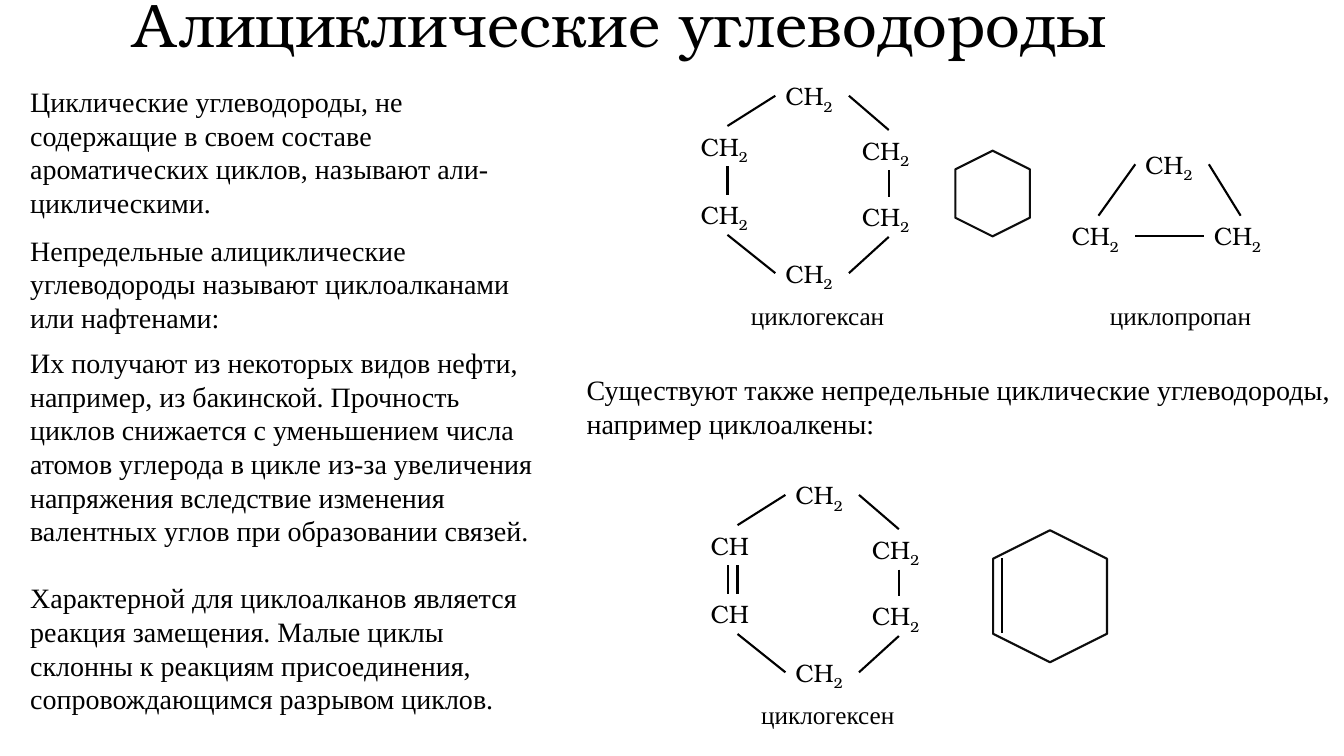
from dataclasses import dataclass

from lxml.etree import SubElement
from pptx import Presentation
from pptx.dml.color import RGBColor
from pptx.enum.shapes import MSO_CONNECTOR, MSO_SHAPE
from pptx.enum.text import MSO_ANCHOR, MSO_AUTO_SIZE
from pptx.oxml.ns import qn
from pptx.util import Inches, Pt

TOP, LEFT, BOTTOM, RIGHT = range(4)


@dataclass(frozen=True)
class Theme:
    ink: RGBColor = RGBColor(0, 0, 0)
    outline: RGBColor = RGBColor(0x0D, 0x0D, 0x0D)
    serif: str = "Times New Roman"
    formula: str = "TeX Gyre Bonum"
    title_size: int = 44
    body_size: int = 20
    label_size: int = 18
    line_width: float = 1.5


class ChemistrySlide:
    def __init__(self, slide, theme):
        self.shapes = slide.shapes
        self.theme = theme

    def text_box(self, left, top, width, height, paragraphs, size, font=None,
                 grow=True, anchor=MSO_ANCHOR.TOP, paragraph_format=None):
        """Each paragraph is a list of runs; a run of digits is a subscript."""
        box = self.shapes.add_textbox(*map(Inches, (left, top, width, height)))
        frame = box.text_frame
        frame_format = {
            "word_wrap": True,
            "vertical_anchor": anchor,
            "auto_size": MSO_AUTO_SIZE.SHAPE_TO_FIT_TEXT if grow else MSO_AUTO_SIZE.NONE,
        }
        for name, value in frame_format.items():
            setattr(frame, name, value)
        for index, runs in enumerate(paragraphs):
            paragraph = frame.add_paragraph() if index else frame.paragraphs[0]
            if index or len(paragraphs) == 1:
                for name, value in (paragraph_format or {}).items():
                    setattr(paragraph, name, value)
            for text in runs:
                run = paragraph.add_run()
                run.text = text
                run.font.color.rgb = self.theme.ink
                for name, value in {"size": Pt(size), "name": font or self.theme.serif}.items():
                    setattr(run.font, name, value)
                if text.isdigit():
                    run.font._element.set("baseline", "-25000")
        return box

    def label(self, left, top, width, text):
        self.text_box(left, top, width, 0.4, [[text]], self.theme.label_size)

    def atom(self, left, top, runs=("CH", "2")):
        return self.text_box(left, top, 0.73, 0.4, [runs],
                             self.theme.label_size, self.theme.formula)

    def line(self, start=(0, 0), end=(0, 0)):
        connector = self.shapes.add_connector(
            MSO_CONNECTOR.STRAIGHT, *map(Inches, (*start, *end)))
        connector.line.color.rgb = self.theme.ink
        connector.line.width = Pt(self.theme.line_width)
        SubElement(connector._element.spPr, qn("a:effectLst"))
        return connector

    def bonds(self, atoms, links):
        """Join atoms by (first, its side, second, its side)."""
        for first, first_side, second, second_side in links:
            bond = self.line()
            bond.begin_connect(atoms[first], first_side)
            bond.end_connect(atoms[second], second_side)

    def hexagon(self, left, top, width, height):
        shape = self.shapes.add_shape(
            MSO_SHAPE.HEXAGON, *map(Inches, (left, top, width, height)))
        shape.rotation = 270
        shape.shadow.inherit = False
        shape.fill.background()
        shape.line.color.rgb = self.theme.outline
        shape.line.width = Pt(self.theme.line_width)

    def six_ring(self, left, top, name, left_runs=("CH", "2")):
        atoms = {
            "top": self.atom(left + 0.84, top),
            "upper left": self.atom(left, top + 0.5, left_runs),
            "lower left": self.atom(left, top + 1.18, left_runs),
            "bottom": self.atom(left + 0.84, top + 1.76),
            "lower right": self.atom(left + 1.6, top + 1.2),
            "upper right": self.atom(left + 1.6, top + 0.54),
        }
        self.bonds(atoms, [
            ("upper left", BOTTOM, "lower left", TOP),
            ("upper right", BOTTOM, "lower right", TOP),
            ("lower left", BOTTOM, "bottom", LEFT),
            ("bottom", RIGHT, "lower right", BOTTOM),
            ("upper right", TOP, "top", RIGHT),
            ("upper left", TOP, "top", LEFT),
        ])
        self.label(left + 0.5, top + 2.18, 1.68, name)

    def three_ring(self, left, top, name):
        atoms = {
            "top": self.atom(left + 0.73, top),
            "left": self.atom(left, top + 0.71),
            "right": self.atom(left + 1.41, top + 0.71),
        }
        self.bonds(atoms, [
            ("left", TOP, "top", LEFT),
            ("top", RIGHT, "right", TOP),
            ("left", RIGHT, "right", LEFT),
        ])
        self.label(left + 0.38, top + 1.5, 1.75, name)


def main():
    presentation = Presentation()
    presentation.slide_width = Inches(13.33)
    presentation.slide_height = Inches(7.5)
    theme = Theme()
    page = ChemistrySlide(
        presentation.slides.add_slide(presentation.slide_layouts[6]), theme)

    page.text_box(1.23, 0.15, 10.88, 0.25, [["Алициклические углеводороды"]],
                  theme.title_size, theme.formula, grow=False,
                  anchor=MSO_ANCHOR.MIDDLE, paragraph_format={"line_spacing": 0.9})
    page.text_box(0.2, 0.79, 5.05, 2.33, [
        ["Циклические углеводороды, не содержащие в своем составе "
         "ароматических циклов, называют али- циклическими."],
        ["Непредельные алициклические углеводороды называют "
         "циклоалканами или нафтенами:"],
    ], theme.body_size, grow=False, paragraph_format={"space_before": Pt(10)})
    page.text_box(0.2, 3.38, 5.35, 3.8, [
        ["Их получают из некоторых видов нефти, например, из бакинской. "
         "Прочность циклов снижается с уменьшением числа атомов углерода в цикле "
         "из-за увеличения напряжения вследствие изменения валентных углов "
         "при образовании связей."],
        ["Характерной для циклоалканов является реакция замещения. Малые циклы "
         "склонны к реакциям присоединения, сопровождающимся разрывом циклов."],
    ], theme.body_size, paragraph_format={"space_before": Pt(24)})
    page.text_box(5.72, 3.65, 7.61, 0.77, [
        ["Существуют также непредельные циклические углеводороды, "
         "например циклоалкены:"],
    ], theme.body_size)

    page.six_ring(6.85, 0.75, "циклогексан")
    page.hexagon(9.42, 1.55, 0.85, 0.74)
    page.three_ring(10.53, 1.43, "циклопропан")

    page.six_ring(6.95, 4.71, "циклогексен", left_runs=("CH",))
    page.line((7.22, 5.61), (7.22, 5.89))
    page.hexagon(9.76, 5.35, 1.31, 1.13)
    page.line((9.94, 5.54), (9.94, 6.28))

    presentation.save("out.pptx")


if __name__ == "__main__":
    main()
